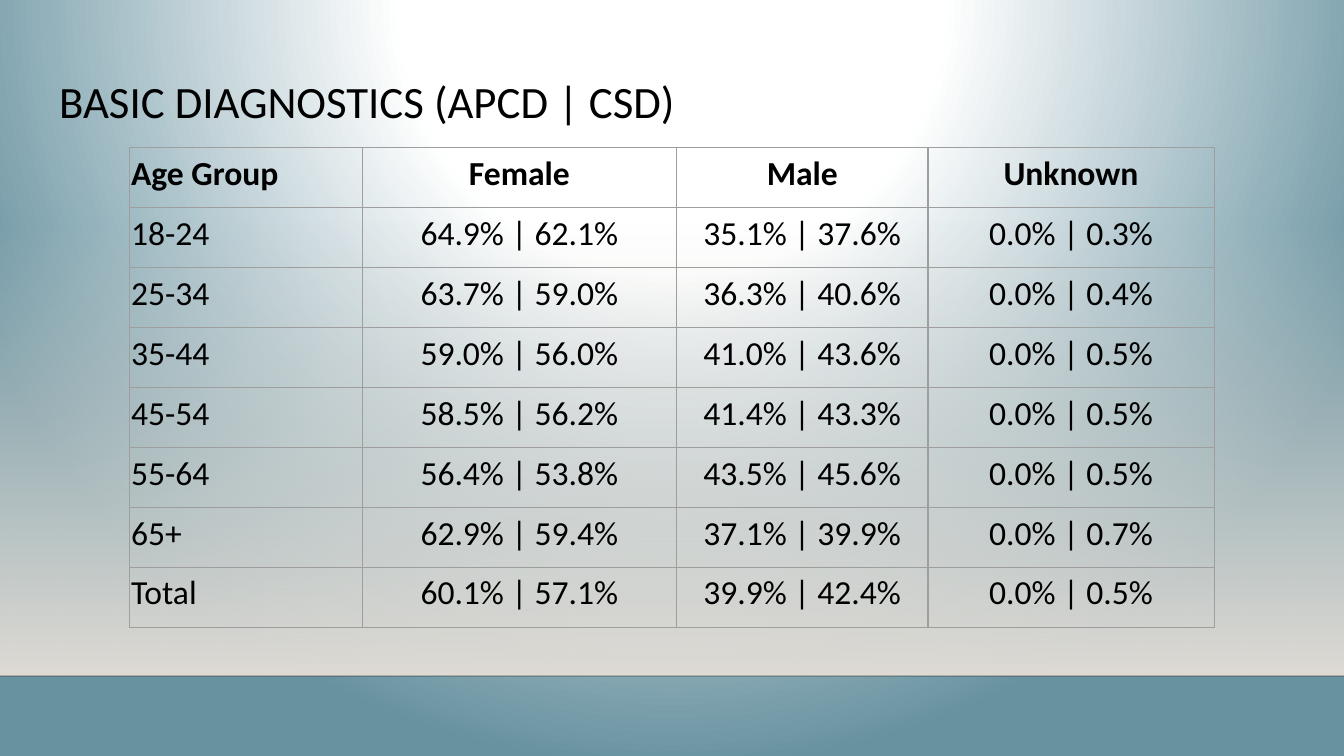
"""Builds a slide with a table of gender shares by age group."""
from lxml import etree
from pptx import Presentation, util as u
from pptx.dml.color import RGBColor
from pptx.enum import shapes, text
from pptx.oxml import parse_xml
from pptx.oxml.ns import nsdecls, qn

WHITE = RGBColor(0xFF, 0xFF, 0xFF)
TEAL = RGBColor(0x68, 0x92, 0xA0)
SAND = RGBColor(0xDF, 0xDB, 0xD5)
INK = RGBColor(0x00, 0x00, 0x00)
LINE = RGBColor(0x00, 0x00, 0x01)
GREY = RGBColor(0x9E, 0x9E, 0x9E)


def set_gradient(parent, stops, direction):
    gs = "".join(
        f'<a:gs pos="{pos * 1000}"><a:srgbClr val="{color}">'
        f'<a:alpha val="{alpha * 1000}"/></a:srgbClr></a:gs>'
        for pos, color, alpha in stops)
    fill = parse_xml(f'<a:gradFill {nsdecls("a")} rotWithShape="1">'
                     f'<a:gsLst>{gs}</a:gsLst>{direction}</a:gradFill>')
    parent.replace(parent.find(qn("a:solidFill")), fill)


def add_run(p, words, size, bold=False):
    r = p.add_run()
    r.text = words
    r.font.name = "Calibri"
    r.font.size = u.Pt(size)
    r.font.bold = bold
    r.font.color.rgb = INK


prs = Presentation()
prs.slide_width = u.Inches(10)
prs.slide_height = prs.slide_width * 9 // 16
W, H = prs.slide_width, prs.slide_height
s = prs.slides.add_slide(prs.slide_layouts[5])

s.background.fill.solid()
set_gradient(
    s._element.find(".//" + qn("p:bgPr")),
    [(0, WHITE, 100), (35, WHITE, 100), (100, TEAL, 100)],
    '<a:path path="circle"><a:fillToRect l="50000" t="-80000" r="50000" b="180000"/></a:path>')

floor_top, floor_bottom = u.Inches(1.66), u.Inches(5.03)
floor = s.shapes.add_shape(shapes.MSO_SHAPE.RECTANGLE, 0, floor_top, W, floor_bottom - floor_top)
floor.shadow.inherit = False
floor.line.fill.background()
floor.fill.solid()
set_gradient(floor._element.spPr, [(0, SAND, 0), (100, SAND, 100)],
             '<a:lin ang="5400000" scaled="0"/>')

edge = s.shapes.add_connector(shapes.MSO_CONNECTOR.STRAIGHT, 0, floor_bottom, W, floor_bottom)
edge.line.width = u.Pt(1)
edge.line.color.rgb = LINE
etree.SubElement(edge._element.spPr.find(".//" + qn("a:srgbClr")), qn("a:alpha")).set("val", "20000")
etree.SubElement(edge._element.spPr, qn("a:effectLst"))

title = s.shapes.title
s.shapes._spTree.append(title._element)
title.left, title.top = u.Inches(0.34), u.Inches(0.49)
title.width, title.height = W - 2 * title.left, u.Inches(0.77)
tf = title.text_frame
tf.word_wrap = True
tf.auto_size = text.MSO_AUTO_SIZE.NONE
tf.vertical_anchor = text.MSO_ANCHOR.TOP
tf.margin_left = tf.margin_right = tf.margin_top = tf.margin_bottom = u.Inches(0.1)
p = tf.paragraphs[0]
p.alignment = text.PP_ALIGN.LEFT
p.line_spacing = 0.9
add_run(p, "BASIC DIAGNOSTICS (APCD | CSD)", 24)

rows = [
    ("Age Group", "Female", "Male", "Unknown"),
    ("18-24", "64.9% | 62.1%", "35.1% | 37.6%", "0.0% | 0.3%"),
    ("25-34", "63.7% | 59.0%", "36.3% | 40.6%", "0.0% | 0.4%"),
    ("35-44", "59.0% | 56.0%", "41.0% | 43.6%", "0.0% | 0.5%"),
    ("45-54", "58.5% | 56.2%", "41.4% | 43.3%", "0.0% | 0.5%"),
    ("55-64", "56.4% | 53.8%", "43.5% | 45.6%", "0.0% | 0.5%"),
    ("65+", "62.9% | 59.4%", "37.1% | 39.9%", "0.0% | 0.7%"),
    ("Total", "60.1% | 57.1%", "39.9% | 42.4%", "0.0% | 0.5%"),
]
col_widths = [1.73, 2.34, 1.87, 2.13]
table_width = u.Inches(sum(col_widths))
table = s.shapes.add_table(len(rows), len(col_widths), (W - table_width) // 2, u.Inches(1.1),
                           table_width, u.Inches(3.57)).table
table.first_row = table.horz_banding = False
for column, width in zip(table.columns, col_widths):
    column.width = u.Inches(width)

for i, row in enumerate(rows):
    for j, words in enumerate(row):
        cell = table.cell(i, j)
        cell.vertical_anchor = text.MSO_ANCHOR.BOTTOM
        cell.margin_left = cell.margin_right = cell.margin_top = u.Inches(0.01)
        cell.margin_bottom = u.Inches(0.1)
        for side in ("lnL", "lnR", "lnT", "lnB"):
            cell._tc.tcPr.append(parse_xml(
                f'<a:{side} {nsdecls("a")} w="{u.Pt(0.75)}"><a:solidFill>'
                f'<a:srgbClr val="{GREY}"/></a:solidFill></a:{side}>'))
        cell.fill.background()
        p = cell.text_frame.paragraphs[0]
        p.alignment = text.PP_ALIGN.CENTER if j else text.PP_ALIGN.LEFT
        add_run(p, words, 18, bold=i == 0)

prs.save("out.pptx")
